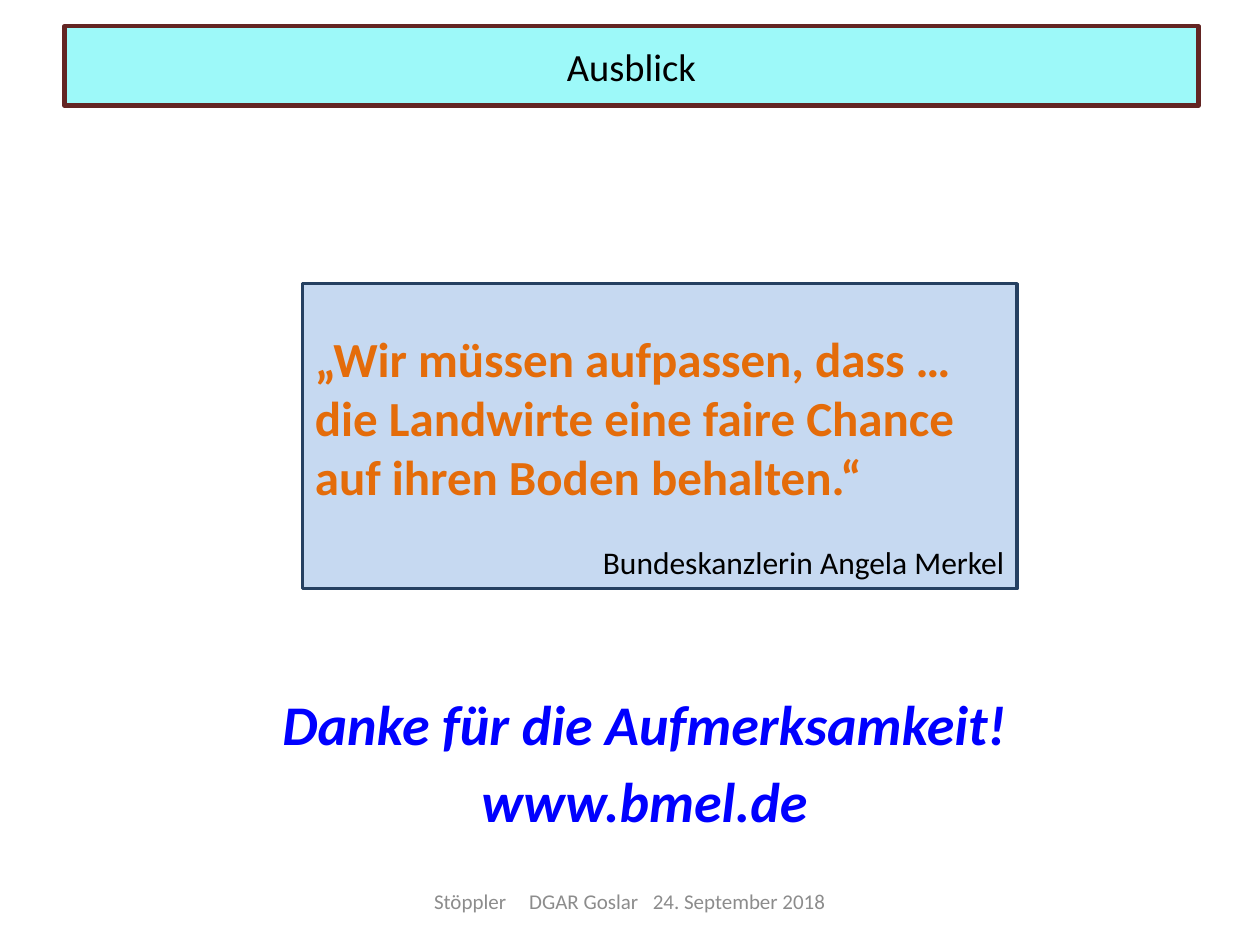
"""Build the closing slide with a quotation, thanks and a footer."""
from lxml import etree
from pptx import Presentation
from pptx.dml.color import RGBColor
from pptx.enum.shapes import MSO_SHAPE
from pptx.enum.text import MSO_ANCHOR, MSO_AUTO_SIZE, PP_ALIGN
from pptx.oxml.ns import qn
from pptx.util import Cm, Pt

LEFT, CENTER, RIGHT = PP_ALIGN.LEFT, PP_ALIGN.CENTER, PP_ALIGN.RIGHT
TOP, MIDDLE = MSO_ANCHOR.TOP, MSO_ANCHOR.MIDDLE
RECTANGLE = MSO_SHAPE.RECTANGLE
NO_AUTOFIT = MSO_AUTO_SIZE.NONE

FONT = "Calibri"
BLACK = RGBColor(0x00, 0x00, 0x00)
BLUE = RGBColor(0x00, 0x00, 0xFF)
GRAY = RGBColor(0x8C, 0x8C, 0x8C)
ORANGE = RGBColor(0xE4, 0x6C, 0x0A)
CYAN = RGBColor(0x9D, 0xF9, 0xF9)
MAROON = RGBColor(0x63, 0x25, 0x23)
PALE_BLUE = RGBColor(0xC6, 0xD9, 0xF1)
NAVY = RGBColor(0x25, 0x40, 0x61)

TITLE = "Ausblick"
QUOTE = "„Wir müssen aufpassen, dass … die Landwirte eine faire Chance auf ihren Boden behalten.“"
SPEAKER = "Bundeskanzlerin Angela Merkel"
CLOSING = ["Danke für die Aufmerksamkeit!", "www.bmel.de"]
FOOTER = ["Stöppler", "DGAR Goslar", "24. September 2018"]
FOOTER_TABS = [Cm(1.92), Cm(4.41)]


def place(box, left, top, width, height):
    box.left, box.top, box.width, box.height = Cm(left), Cm(top), Cm(width), Cm(height)


def paint(box, fill, line, weight):
    box.fill.solid()
    box.fill.fore_color.rgb = fill
    box.line.color.rgb = line
    box.line.width = Pt(weight)


def prepare(box, anchor=TOP, **margins):
    frame = box.text_frame
    frame.word_wrap = True
    frame.auto_size = NO_AUTOFIT
    frame.vertical_anchor = anchor
    for name, value in margins.items():
        setattr(frame, name, Cm(value))
    return frame


def write(frame, text, size, color, align=LEFT, bold=False, italic=False, before=0):
    para = frame.add_paragraph() if frame.text else frame.paragraphs[0]
    para.alignment = align
    para.space_before = Pt(before)
    span = para.add_run()
    span.text = text
    font = span.font
    font.name, font.size, font.bold, font.italic = FONT, Pt(size), bold, italic
    font.color.rgb = color
    return para


def main():
    deck = Presentation()
    deck.slide_width, deck.slide_height = Cm(25.4), Cm(19.05)
    page = deck.slides.add_slide(deck.slide_layouts[1])

    title = page.shapes.title
    place(title, 1.3, 0.53, 22.86, 1.6)
    paint(title, CYAN, MAROON, 2.5)
    write(prepare(title, MIDDLE), TITLE, 22, BLACK, align=CENTER)

    body = page.placeholders[1]
    place(body, 1.17, 12.73, 22.86, 4.8)
    frame = prepare(body, margin_top=1.16)
    for index, text in enumerate(CLOSING):
        para = write(frame, text, 32, BLUE, align=CENTER, bold=True, italic=True,
                     before=6 if index else 0)
        properties = para._p.get_or_add_pPr()
        properties.set("marL", str(Cm(0.79)))
        properties.set("indent", "0")
        etree.SubElement(properties, qn("a:buNone"))

    quote = page.shapes.add_shape(RECTANGLE, Cm(6.1), Cm(5.72), Cm(14.4), Cm(6.15))
    quote.shadow.inherit = False
    paint(quote, PALE_BLUE, NAVY, 2)
    frame = prepare(quote, margin_top=0.9)
    write(frame, QUOTE, 28, ORANGE, bold=True)
    write(frame, SPEAKER, 18, BLACK, align=RIGHT, before=22)

    footer = page.shapes.add_textbox(Cm(3.71), Cm(17.65), Cm(18), Cm(1.02))
    frame = prepare(footer, MIDDLE, margin_left=5.04)
    para = write(frame, "\t".join(FOOTER), 12, GRAY)
    tabs = etree.SubElement(para._p.get_or_add_pPr(), qn("a:tabLst"))
    for position in FOOTER_TABS:
        etree.SubElement(tabs, qn("a:tab"), pos=str(position), algn="l")

    deck.save("out.pptx")


if __name__ == "__main__":
    main()
